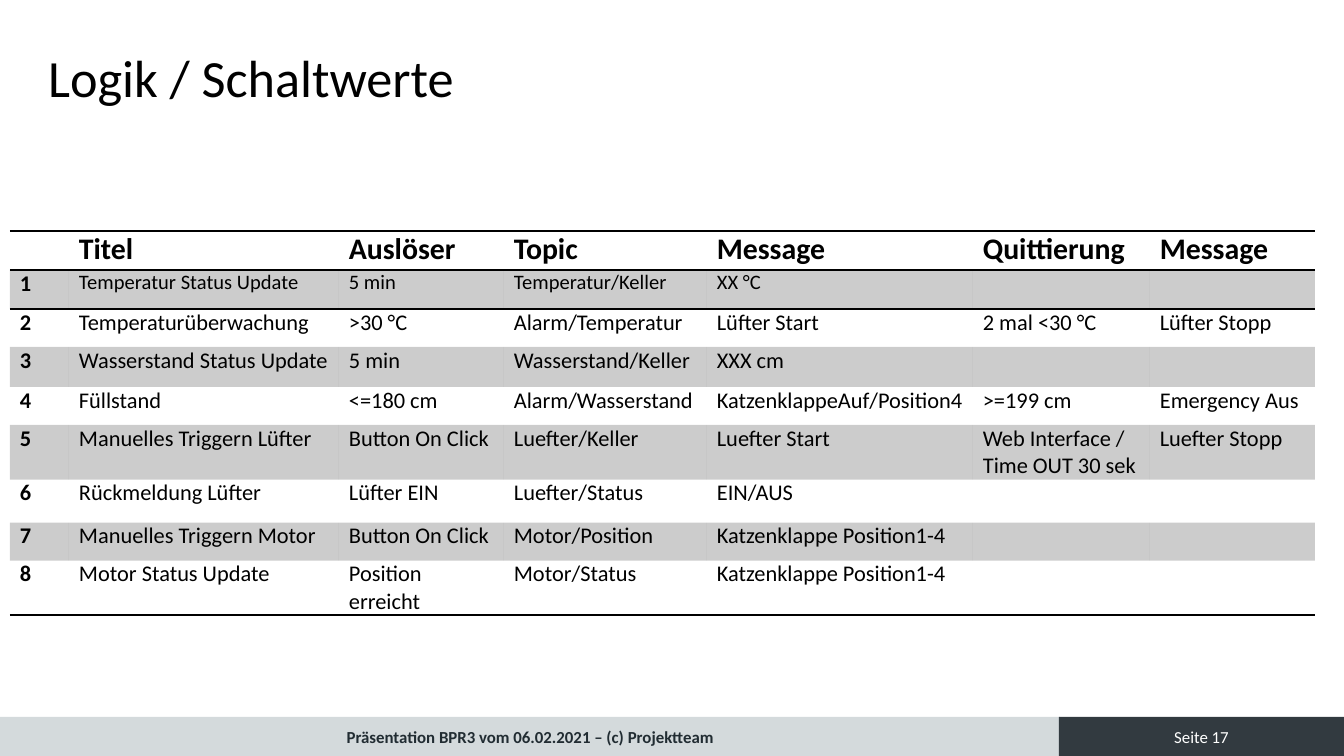
import pptx
import pptx.util
import pptx.dml.color
import pptx.enum.shapes
import pptx.enum.text
import pptx.oxml.ns
from lxml import etree

PX = 9144000 / 1344
FONT = "Calibri"
PLAIN_STYLE = "{2D5ABB26-0587-4C30-8999-92F81FD0307C}"


def px(length):
    return pptx.util.Emu(round(length * PX))


def add_text(para, text, size, color, bold=False):
    span = para.add_run()
    span.text = text
    span.font.name = FONT
    span.font.size = pptx.util.Pt(size)
    span.font.bold = bold
    span.font.color.rgb = pptx.dml.color.RGBColor.from_string(color)


deck = pptx.Presentation()
deck.slide_width, deck.slide_height = px(1344), px(756)
page = deck.slides.add_slide(deck.slide_layouts[6])
qn = pptx.oxml.ns.qn

# Footer bars
footer = [
    (0, 1060, "D4DADC", "Präsentation BPR3 vom 06.02.2021 – (c) Projektteam", "212C32", True),
    (1059, 285, "323A40", "Seite 17", "FFFFFF", False),
]
for left, width, fill, text, color, bold in footer:
    bar = page.shapes.add_shape(
        pptx.enum.shapes.MSO_SHAPE.RECTANGLE, px(left), px(717), px(width), px(39))
    bar.shadow.inherit = False
    bar.fill.solid()
    bar.fill.fore_color.rgb = pptx.dml.color.RGBColor.from_string(fill)
    bar.line.fill.background()
    bar.text_frame.vertical_anchor = pptx.enum.text.MSO_ANCHOR.MIDDLE
    para = bar.text_frame.paragraphs[0]
    para.alignment = pptx.enum.text.PP_ALIGN.CENTER
    add_text(para, text, 9, color, bold)

# Table of switching values
rows = [
    ["", "Titel", "Auslöser", "Topic", "Message", "Quittierung", "Message"],
    ["1", "Temperatur Status Update", "5 min", "Temperatur/Keller", "XX °C", "", ""],
    ["2", "Temperaturüberwachung", ">30 °C", "Alarm/Temperatur", "Lüfter Start",
     "2 mal <30 °C", "Lüfter Stopp"],
    ["3", "Wasserstand Status Update", "5 min", "Wasserstand/Keller", "XXX cm", "", ""],
    ["4", "Füllstand", "<=180 cm", "Alarm/Wasserstand", "KatzenklappeAuf/Position4",
     ">=199 cm", "Emergency Aus"],
    ["5", "Manuelles Triggern Lüfter", "Button On Click", "Luefter/Keller", "Luefter Start",
     "Web Interface / Time OUT 30 sek", "Luefter Stopp"],
    ["6", "Rückmeldung Lüfter", "Lüfter EIN", "Luefter/Status", "EIN/AUS", "", ""],
    ["7", "Manuelles Triggern Motor", "Button On Click", "Motor/Position",
     "Katzenklappe Position1-4", "", ""],
    ["8", "Motor Status Update", "Position erreicht", "Motor/Status",
     "Katzenklappe Position1-4", "", ""],
]
column_widths = [59, 270, 165, 203, 266, 177, 165]
row_heights = [39, 39, 38, 40, 38, 39, 43, 38, 39]
last_row = len(rows) - 1

frame = page.shapes.add_table(
    len(rows), len(column_widths), px(10), px(231),
    px(sum(column_widths)), px(sum(row_heights)))
table = frame.table
table.first_row = table.horz_banding = False
table._tbl.tblPr.find(qn("a:tableStyleId")).text = PLAIN_STYLE
for column, width in zip(table.columns, column_widths):
    column.width = px(width)
for row, height in zip(table.rows, row_heights):
    row.height = px(height)

for r, texts in enumerate(rows):
    edges = {0: ["a:lnT", "a:lnB"], 1: ["a:lnT"], last_row: ["a:lnB"]}.get(r, [])
    for c, text in enumerate(texts):
        cell = table.cell(r, c)
        cell.margin_left = cell.margin_right = px(10)
        cell.margin_top = cell.margin_bottom = 0
        size = 16 if r == 0 else 11 if r == 1 and c > 0 else 12
        para = cell.text_frame.paragraphs[0]
        if text:
            add_text(para, text, size, "000000", r == 0 or c == 0)
        else:
            # An empty cell takes its line height from the paragraph end mark
            etree.SubElement(para._p, qn("a:endParaRPr"), sz=str(size * 100))

        # Rules above and below the header and under the last row
        properties = cell._tc.get_or_add_tcPr()
        for edge in edges:
            line = etree.SubElement(properties, qn(edge), w="12700")
            solid = etree.SubElement(line, qn("a:solidFill"))
            etree.SubElement(solid, qn("a:srgbClr"), val="000000")

        # Odd rows carry a transparent black band
        if r % 2:
            cell.fill.solid()
            cell.fill.fore_color.rgb = pptx.dml.color.RGBColor.from_string("000000")
            tint = properties.find(qn("a:solidFill")).find(qn("a:srgbClr"))
            etree.SubElement(tint, qn("a:alpha"), val="20000")
        else:
            cell.fill.background()

# Title
box = page.shapes.add_textbox(px(35), px(39), px(958), px(140))
box.text_frame.word_wrap = True
add_text(box.text_frame.paragraphs[0], "Logik / Schaltwerte", 28, "000000")

deck.save("out.pptx")
